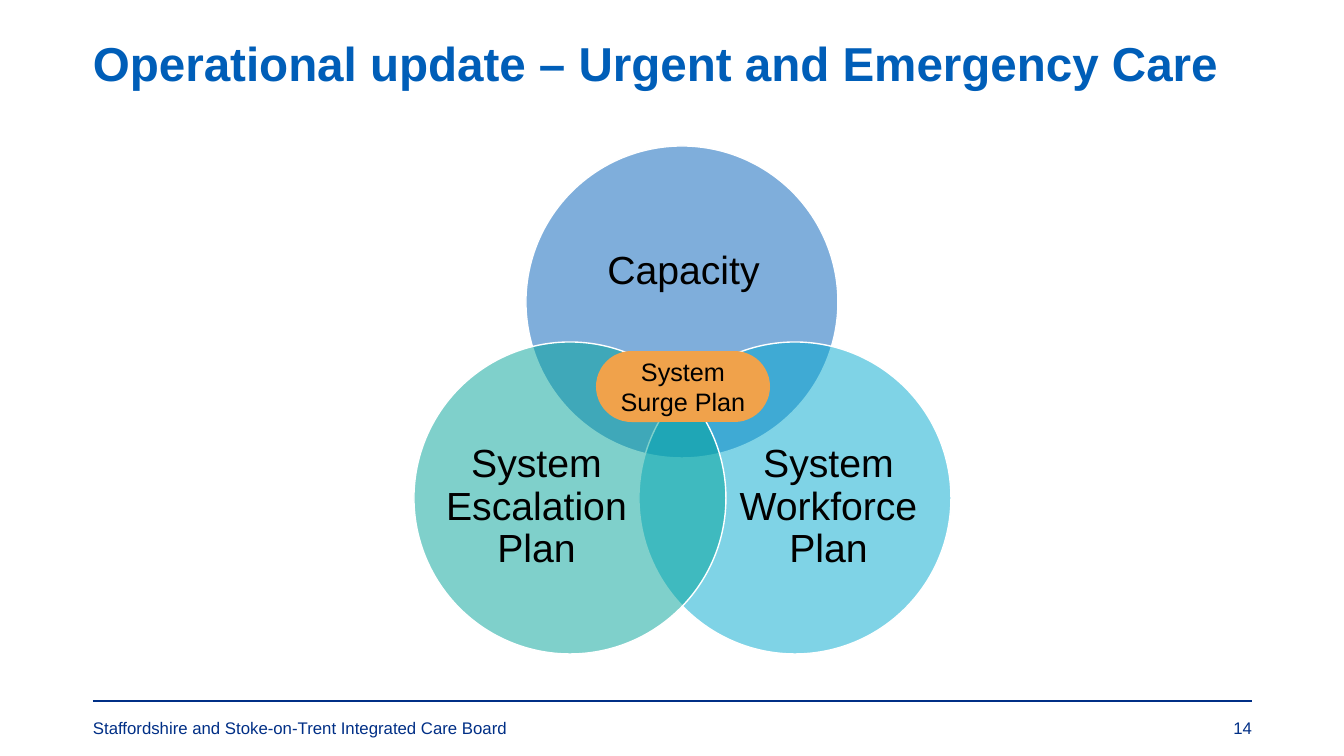
from pptx import Presentation
from pptx.dml.color import RGBColor
from pptx.enum.shapes import MSO_CONNECTOR, MSO_SHAPE
from pptx.enum.text import MSO_ANCHOR, PP_ALIGN
from pptx.oxml.ns import qn
from pptx.util import Pt
from lxml.etree import SubElement

PX = 914400 / 100.8
COLORS = {
    "title": "005EB8", "navy": "002F86", "white": "FFFFFF", "black": "000000",
    "blue": "005EB8", "sky": "00A8CE", "teal": "00A399", "amber": "F0A24B",
}


def px(*sizes):
    return [round(size * PX) for size in sizes]


def write(shape, text, size, color, align, anchor, pads, line=1.0, bold=False):
    frame = shape.text_frame
    left, top, right, bottom = px(*pads)
    form = {
        "word_wrap": True, "vertical_anchor": anchor, "margin_left": left,
        "margin_top": top, "margin_right": right, "margin_bottom": bottom,
    }
    for name, value in form.items():
        setattr(frame, name, value)
    para = frame.paragraphs[0]
    para.text = text
    para.alignment = align
    para.line_spacing = line
    for name, value in {"name": "Arial", "size": Pt(size), "bold": bold}.items():
        setattr(para.font, name, value)
    para.font.color.rgb = RGBColor.from_string(COLORS[color])


deck = Presentation()
deck.slide_width, deck.slide_height = px(1344, 756)
slide = deck.slides.add_slide(deck.slide_layouts[6])
shapes = slide.shapes

rule = shapes.add_connector(MSO_CONNECTOR.STRAIGHT, *px(93, 701, 1252, 701))
rule.line.color.rgb = RGBColor.from_string(COLORS["navy"])
rule.line.width = Pt(1.5)
SubElement(rule._element.spPr, qn("a:effectLst"))

title = shapes.add_textbox(*px(93, 40, 1180, 64))
write(title, "Operational update – Urgent and Emergency Care", 34, "title",
      PP_ALIGN.LEFT, MSO_ANCHOR.TOP, (0, 0, 0, 0), 0.9, True)

SIZE = 312
circles = [
    ("Capacity", "blue", (526, 146), (569, 202, 229, 140)),
    ("System Workforce Plan", "sky", (639, 342), (735, 422, 187, 171)),
    ("System Escalation Plan", "teal", (414, 342), (443, 422, 187, 171)),
]
for text, color, spot, box in circles:
    disc = shapes.add_shape(MSO_SHAPE.OVAL, *px(*spot, SIZE, SIZE))
    disc.shadow.inherit = False
    disc.fill.solid()
    disc.fill.fore_color.rgb = RGBColor.from_string(COLORS[color])
    tint = disc._element.spPr.find(qn("a:solidFill"))[0]
    SubElement(tint, qn("a:alpha"), val="50000")
    disc.line.color.rgb = RGBColor.from_string(COLORS["white"])
    disc.line.width = Pt(1)
    label = shapes.add_textbox(*px(*box))
    write(label, text, 28, "black", PP_ALIGN.CENTER, MSO_ANCHOR.MIDDLE,
          (0, 0, 0, 0), 0.9)

surge = shapes.add_shape(MSO_SHAPE.ROUNDED_RECTANGLE, *px(596, 351, 174, 71))
surge.adjustments[0] = 0.5
surge.shadow.inherit = False
surge.fill.solid()
surge.fill.fore_color.rgb = RGBColor.from_string(COLORS["amber"])
surge.line.fill.background()
write(surge, "System Surge Plan", 18, "black", PP_ALIGN.CENTER,
      MSO_ANCHOR.MIDDLE, (10, 5, 10, 5))

footers = [
    ("Staffordshire and Stoke-on-Trent Integrated Care Board",
     (93, 713, 806, 30), PP_ALIGN.LEFT, (0, 5, 10, 5)),
    ("14", (950, 713, 302, 30), PP_ALIGN.RIGHT, (10, 5, 0, 5)),
]
for text, box, align, pads in footers:
    foot = shapes.add_textbox(*px(*box))
    write(foot, text, 12, "navy", align, MSO_ANCHOR.TOP, pads)

deck.save("out.pptx")
